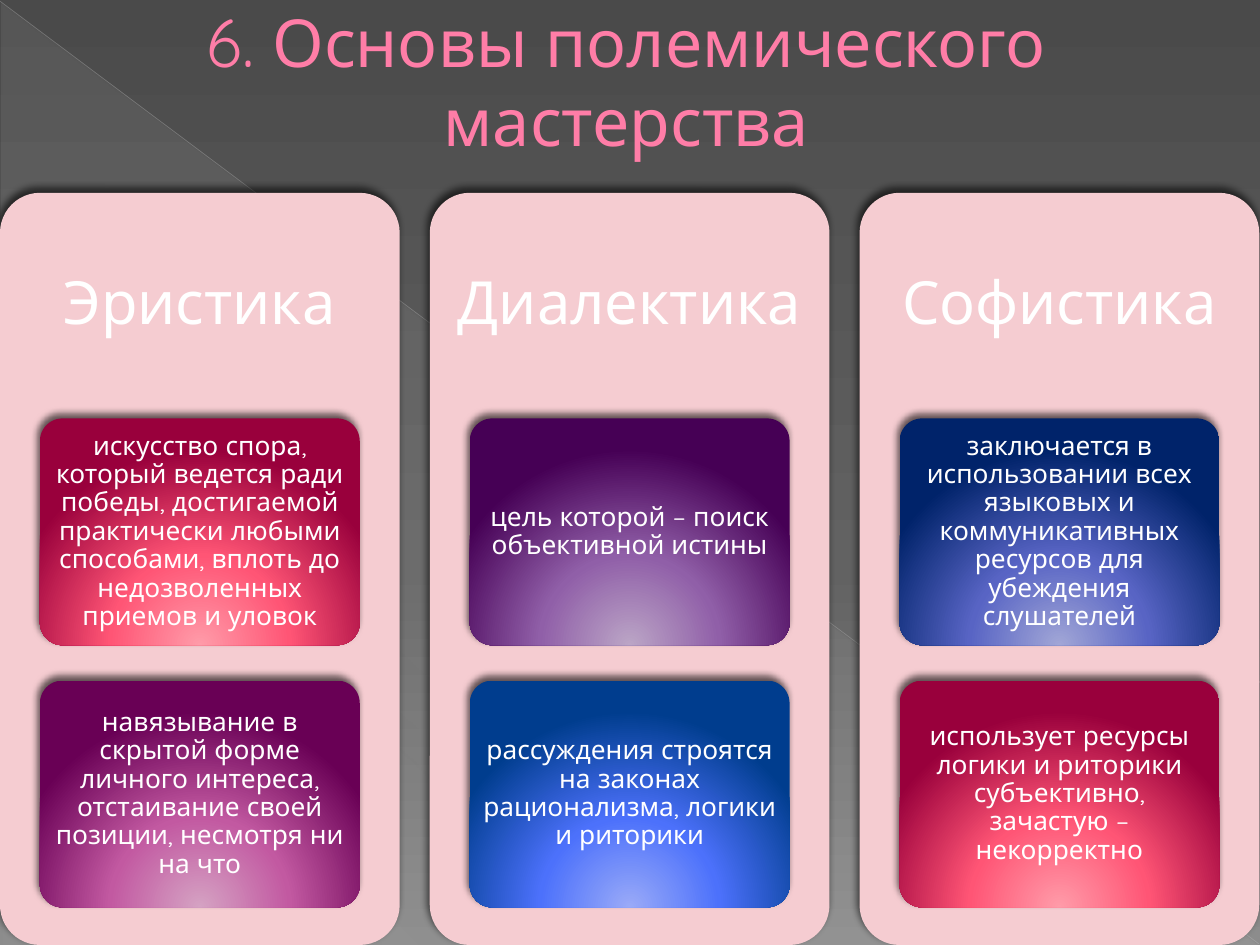
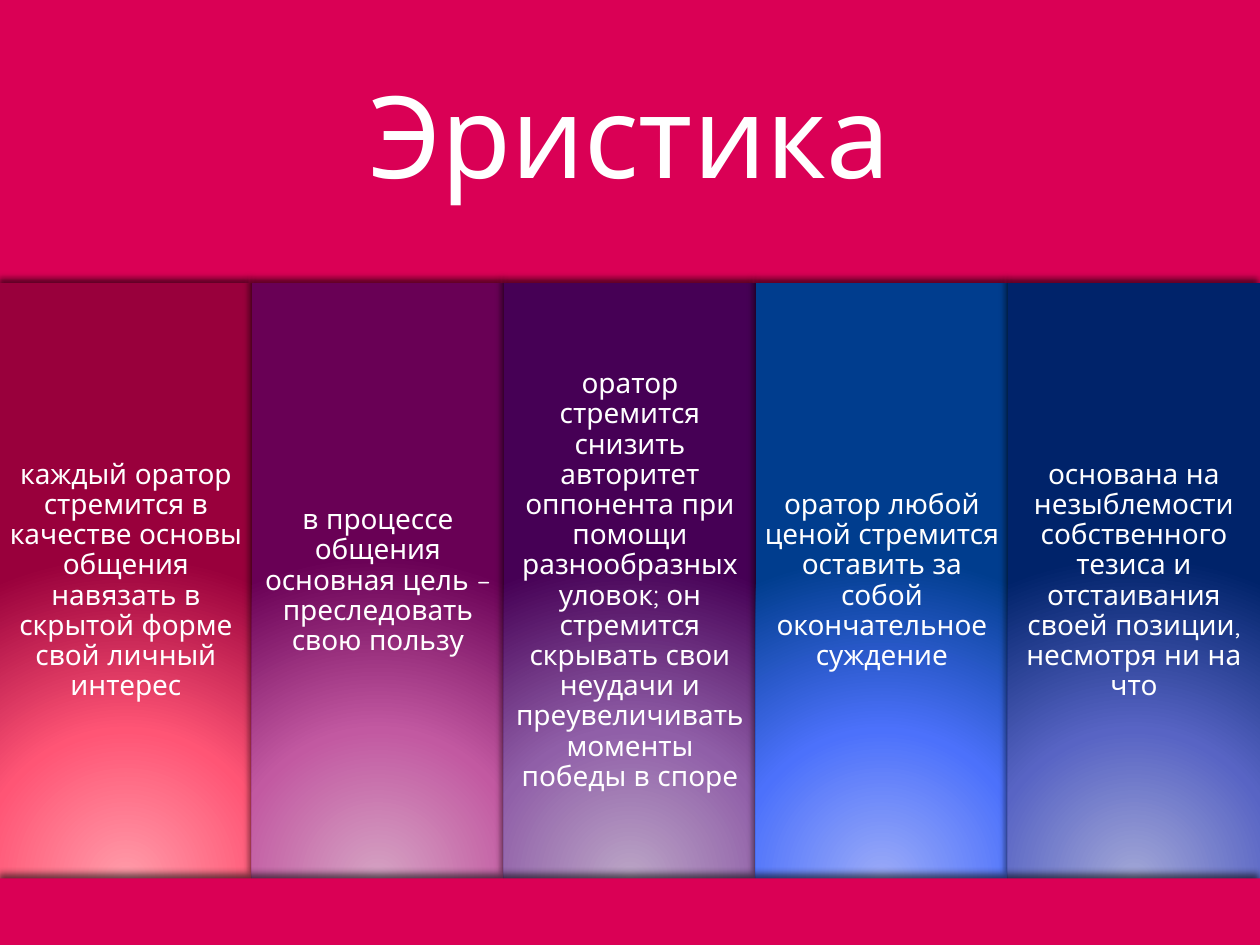
import lxml.etree
import pptx
import pptx.dml.color
import pptx.enum.shapes
import pptx.enum.text
import pptx.oxml
import pptx.oxml.ns
import pptx.util

Pt = pptx.util.Pt
SHAPE = pptx.enum.shapes.MSO_SHAPE
FONT = "Quicksand"
WIDTH, HEIGHT = 720, 540
WHITE, PINK, CARD_PINK, CRIMSON = "FFFFFF", "FF7DA7", "F5CCD1", "DA0055"
RED = ("FF9BA9", "FF5575", "99003C")
MAGENTA = ("D5A2C3", "C259A1", "690055")
VIOLET = ("BBA5C6", "905FA8", "460055")
BLUE = ("9AAAF8", "4C71FB", "003D8E")
NAVY = ("A1A6D6", "5864C4", "00236A")
GLOW = '<a:path path="circle"><a:fillToRect l="50000" t="155000" r="50000" b="-55000"/></a:path>'

CARDS = [
    ("Эристика", [
        (RED, "искусство спора, который ведется ради победы, достигаемой практически "
              "любыми способами, вплоть до недозволенных приемов и уловок"),
        (MAGENTA, "навязывание в скрытой форме личного интереса, отстаивание своей "
                  "позиции, несмотря ни на что")]),
    ("Диалектика", [
        (VIOLET, "цель которой – поиск объективной истины"),
        (BLUE, "рассуждения строятся на законах рационализма, логики и риторики")]),
    ("Софистика", [
        (NAVY, "заключается в использовании всех языковых и коммуникативных ресурсов "
               "для убеждения слушателей"),
        (RED, "использует ресурсы логики и риторики субъективно, зачастую – некорректно")]),
]
PANELS = [
    (RED, "каждый оратор стремится в качестве основы общения навязать в скрытой форме "
          "свой личный интерес"),
    (MAGENTA, "в процессе общения основная цель – преследовать свою пользу"),
    (VIOLET, "оратор стремится снизить авторитет оппонента при помощи разнообразных "
             "уловок; он стремится скрывать свои неудачи и преувеличивать моменты "
             "победы в споре"),
    (BLUE, "оратор любой ценой стремится оставить за собой окончательное суждение"),
    (NAVY, "основана на незыблемости собственного тезиса и отстаивания своей позиции, "
           "несмотря ни на что"),
]


def color(value):
    return pptx.dml.color.RGBColor.from_string(value)


def drawing(tag, content):
    namespace = pptx.oxml.ns.nsdecls("a")
    return pptx.oxml.parse_xml(f"<a:{tag} {namespace}>{content}</a:{tag}>")


def linear(angle):
    return f'<a:lin ang="{angle * 60000}" scaled="0"/>'


def paint_gradient(fill, element, stops, direction):
    fill.solid()
    solid = element.xpath(".//a:solidFill")[0]
    content = "".join(
        f'<a:gs pos="{position * 1000}"><a:srgbClr val="{value}">'
        f'<a:alpha val="{opacity * 1000}"/></a:srgbClr></a:gs>'
        for position, value, opacity in stops)
    gradient = drawing("gradFill", f"<a:gsLst>{content}</a:gsLst>{direction}")
    solid.getparent().replace(solid, gradient)


def paint(shape, fill):
    if isinstance(fill, str):
        shape.fill.solid()
        shape.fill.fore_color.rgb = color(fill)
    else:
        stops = [(position, value, 100) for position, value in zip((0, 46, 100), fill)]
        paint_gradient(shape.fill, shape.element, stops, GLOW)
    shape.line.fill.background()


def add_shadow(shape):
    shape.shadow.inherit = False
    shadow = drawing("effectLst", (
        f'<a:outerShdw blurRad="{Pt(4)}" dist="{Pt(3)}" dir="{245 * 60000}" '
        'rotWithShape="0"><a:srgbClr val="000000"><a:alpha val="60000"/></a:srgbClr>'
        "</a:outerShdw>"))
    effects = shape.element.xpath("p:spPr/a:effectLst")[0]
    effects.getparent().replace(effects, shadow)


def write(shape, text, size, margins, text_color=WHITE, spacing=0.9):
    frame = shape.text_frame
    frame.text = text
    frame.word_wrap = True
    frame.auto_size = pptx.enum.text.MSO_AUTO_SIZE.NONE
    frame.vertical_anchor = pptx.enum.text.MSO_ANCHOR.MIDDLE
    frame.margin_left = frame.margin_right = Pt(margins[0])
    frame.margin_top = frame.margin_bottom = Pt(margins[1])
    paragraph = frame.paragraphs[0]
    paragraph.alignment = pptx.enum.text.PP_ALIGN.CENTER
    paragraph.line_spacing = spacing
    paragraph.font.name = FONT
    paragraph.font.size = Pt(size)
    paragraph.font.color.rgb = color(text_color)


def place(shape, left, top, width, height):
    shape.left, shape.top = Pt(left), Pt(top)
    shape.width, shape.height = Pt(width), Pt(height)


def add_block(slide, kind, fill, left, top, width, height):
    block = slide.shapes.add_shape(kind, Pt(left), Pt(top), Pt(width), Pt(height))
    if kind == SHAPE.ROUNDED_RECTANGLE:
        block.adjustments[0] = 0.1
    paint(block, fill)
    add_shadow(block)
    return block


def add_ray(slide, start, end, value, width, opacity):
    ray = slide.shapes.add_connector(
        pptx.enum.shapes.MSO_CONNECTOR.STRAIGHT, *map(Pt, start + end))
    ray.line.width = Pt(width)
    ray.line.color.rgb = color(value)
    tint = ray.element.xpath(".//a:ln//a:srgbClr")[0]
    lxml.etree.SubElement(tint, pptx.oxml.ns.qn("a:alpha"), val=str(opacity * 1000))
    ray.element.spPr.append(drawing("effectLst", ""))
    return ray


def decorate_master(master, slide):
    background = [(0, "4A4A4A", 100), (60, "626262", 100), (100, "8C8C8C", 100)]
    fill = master.background.fill
    paint_gradient(fill, master.element.xpath("p:cSld/p:bg")[0], background, linear(90))
    triangle = slide.shapes.add_shape(
        SHAPE.RIGHT_TRIANGLE, Pt(0.7), Pt(1.4), Pt(718.6), Pt(538.6))
    sheen = [(0, "D2D2D2", 10), (70, "D2D2D2", 8), (100, "D2D2D2", 1)]
    paint_gradient(triangle.fill, triangle.element, sheen, linear(133))
    triangle.line.fill.background()
    triangle.shadow.inherit = False
    diagonal = add_ray(slide, (0, 0.7), (719.3, 539.3), "BFBFBF", 0.39, 35)
    corner = add_ray(slide, (720, 389.5), (509, 539.3), "C6C6C6", 0.47, 45)
    for index, shape in enumerate((triangle, diagonal, corner)):
        shape.element.xpath(".//p:cNvPr")[0].set("id", str(100 + index))
        master.shapes.element.insert(2 + index, shape.element)


def add_polemic_title(slide):
    title = slide.shapes.title
    place(title, 34, 0, 648, 92)
    write(title, "6. Основы полемического мастерства", 37.8, (7.2, 3.6), PINK, 1.0)
    outline = drawing("ln", '<a:solidFill><a:srgbClr val="B12761"/></a:solidFill>')
    outline.set("w", str(Pt(0.5)))
    title.element.xpath(".//a:defRPr")[0].insert(0, outline)


def add_card(slide, left, heading, notes):
    top, width, inset = 110.2, 228.4, 22.8
    heading_height, note_height, note_step = 128.9, 129.6, 149.8
    add_block(slide, SHAPE.ROUNDED_RECTANGLE, CARD_PINK, left, top, width, HEIGHT - top)
    label = slide.shapes.add_textbox(Pt(left), Pt(top), Pt(width), Pt(heading_height))
    write(label, heading, 34, (10, 10))
    for row, (fill, text) in enumerate(notes):
        note = add_block(slide, SHAPE.ROUNDED_RECTANGLE, fill, left + inset,
                         top + heading_height + row * note_step,
                         width - 2 * inset, note_height)
        write(note, text, 15, (3, 2.2))


def add_eristic_panels(slide):
    header_height, panel_height = 162, 340
    panel_width = WIDTH / len(PANELS)
    header = slide.shapes.title
    place(header, 0, 0, WIDTH, header_height)
    paint(header, CRIMSON)
    add_shadow(header)
    write(header, "Эристика", 65, (19.5, 19.5))
    for column, (fill, text) in enumerate(PANELS):
        panel = add_block(slide, SHAPE.RECTANGLE, fill, column * panel_width,
                          header_height, panel_width, panel_height)
        write(panel, text, 16, (5, 5))
    bottom = header_height + panel_height
    add_block(slide, SHAPE.RECTANGLE, CRIMSON, 0, bottom, WIDTH, HEIGHT - bottom)


def main():
    presentation = pptx.Presentation()
    presentation.slide_width, presentation.slide_height = Pt(WIDTH), Pt(HEIGHT)
    title_only = presentation.slide_layouts[5]

    polemics = presentation.slides.add_slide(title_only)
    decorate_master(presentation.slide_master, polemics)
    add_polemic_title(polemics)
    for column, (heading, notes) in enumerate(CARDS):
        add_card(polemics, column * 245.6, heading, notes)

    eristics = presentation.slides.add_slide(title_only)
    add_eristic_panels(eristics)
    presentation.save("out.pptx")


if __name__ == "__main__":
    main()
